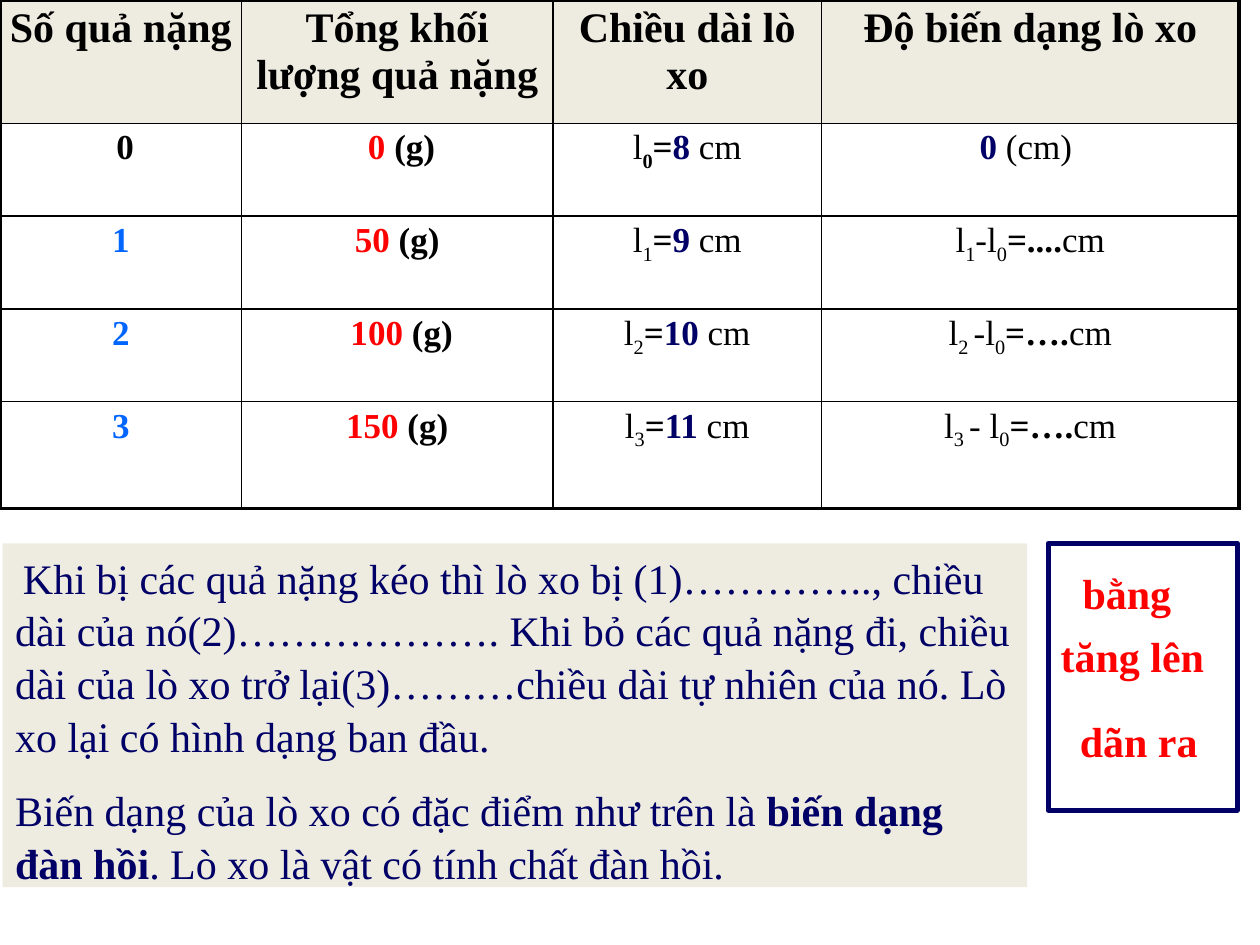
from dataclasses import dataclass

from lxml.etree import SubElement
from pptx import Presentation
from pptx.dml.color import RGBColor
from pptx.enum.shapes import MSO_SHAPE as Shape
from pptx.enum.text import MSO_ANCHOR as Anchor, PP_ALIGN as Align
from pptx.oxml.ns import qn
from pptx.util import Pt

COLORS = {
    "black": "000000", "white": "FFFFFF", "cream": "EEECE1",
    "navy": "000066", "blue": "0066FF", "red": "FF0000",
}
FONT = "Times New Roman"
COL_WIDTHS = [138, 178, 153.5, 238.5]
ROW_HEIGHTS = [70.5, 53, 53, 53, 61]
THIN, THICK = 1, 2.25


@dataclass(frozen=True)
class Run:
    text: str
    color: str = "black"
    bold: bool = False
    sub: bool = False
    size: float | None = None


@dataclass(frozen=True)
class Label:
    text: str
    left: float
    top: float
    width: float


def rgb(name: str) -> RGBColor:
    return RGBColor.from_string(COLORS[name])


def write(p, text: str, *, size: float, color="black", bold=False, sub=False) -> None:
    r = p.add_run()
    r.text = text
    r.font.name, r.font.size, r.font.bold = FONT, Pt(size), bold
    r.font.color.rgb = rgb(color)
    if sub:
        r.font._element.set("baseline", "-25000")


def write_runs(p, runs: list[Run], size: float) -> None:
    for run in runs:
        write(p, run.text, size=run.size or size, color=run.color,
              bold=run.bold, sub=run.sub)


def add_border(cell, side: str, width: float) -> None:
    ln = SubElement(cell._tc.get_or_add_tcPr(), qn(f"a:ln{side}"), w=str(Pt(width)))
    fill = SubElement(ln, qn("a:solidFill"))
    SubElement(fill, qn("a:srgbClr"), val=COLORS["black"])


def add_box(slide, left: float, top: float, width: float, height: float, fill: str):
    sp = slide.shapes.add_shape(Shape.RECTANGLE, Pt(left), Pt(top), Pt(width), Pt(height))
    sp.shadow.inherit = False
    sp.fill.solid()
    sp.fill.fore_color.rgb = rgb(fill)
    sp.line.fill.background()
    return sp


def length(n: str, value: str, bold_sub=False) -> list[Run]:
    """Spring length, such as l1=9 cm."""
    return [Run("l"), Run(n, sub=True, bold=bold_sub), Run("=", bold=True),
            Run(f"{value} ", "navy", True), Run("cm")]


def stretch(n: str, minus: str, dots: str) -> list[Run]:
    """Difference from the natural length, left open to fill in."""
    return [Run("l"), Run(n, sub=True), Run(f"{minus}l"), Run("0", sub=True),
            Run(f"={dots}", bold=True), Run("cm")]


def mass(value: str) -> list[Run]:
    return [Run(f"{value} ", "red", True), Run("(g)", bold=True)]


def count(n: str, color="blue") -> list[Run]:
    return [Run(n, color, True)]


HEADINGS = ["Số quả nặng", "Tổng khối lượng quả nặng", "Chiều dài lò xo",
            "Độ biến dạng lò xo"]
ROWS = [
    [[Run(text, bold=True)] for text in HEADINGS],
    [count(" 0", "black"), mass(" 0"), length("0", "8", bold_sub=True),
     [Run("0 ", "navy", True), Run("(cm) ")]],
    [count("1"), mass("50"), length("1", "9"), stretch("1", "-", "....")],
    [count("2"), mass(" 100"), length("2", "10"), stretch("2 ", "-", "….")],
    [count("3"), mass("150"), length("3", "11"), stretch("3 ", "- ", "….")],
]
CONCLUSION = [
    [Run(" ", "navy", size=18),
     Run("Khi bị các quả nặng kéo thì lò xo bị (1)………….., chiều dài của "
         "nó(2)………………. Khi bỏ các quả nặng đi, chiều dài của lò xo trở "
         "lại(3)………chiều dài tự nhiên của nó. Lò xo lại có hình dạng ban đầu.",
         "navy")],
    [Run("Biến dạng của lò xo có đặc điểm như trên là ", "navy"),
     Run("biến dạng đàn hồi", "navy", True),
     Run(". Lò xo là vật có tính chất đàn hồi.", "navy")],
]
ANSWERS = [
    Label("bằng", 611.5, 320.5, 68),
    Label("tăng lên", 599, 357, 106.5),
    Label("dãn ra", 610, 405.5, 86),
]


def draw_table(slide) -> None:
    n_rows, n_cols = len(ROW_HEIGHTS), len(COL_WIDTHS)
    table = slide.shapes.add_table(n_rows, n_cols, 0, 0, Pt(sum(COL_WIDTHS)),
                                   Pt(sum(ROW_HEIGHTS))).table
    table.first_row = table.horz_banding = False
    for col, width in zip(table.columns, COL_WIDTHS):
        col.width = Pt(width)
    for i, (row, height) in enumerate(zip(table.rows, ROW_HEIGHTS)):
        row.height = Pt(height)
        for j, cell in enumerate(row.cells):
            outer = {"L": j == 0, "R": j == n_cols - 1,
                     "T": i == 0, "B": i == n_rows - 1}
            for side, is_outer in outer.items():
                add_border(cell, side, THICK if is_outer else THIN)
            cell.fill.solid()
            cell.fill.fore_color.rgb = rgb("white" if i else "cream")
            cell.margin_left = cell.margin_right = Pt(5)
            cell.margin_top = cell.margin_bottom = Pt(3)
            p = cell.text_frame.paragraphs[0]
            p.alignment = Align.CENTER
            write_runs(p, ROWS[i][j], 20 if i else 24)


def draw_conclusion(slide) -> None:
    tf = add_box(slide, 1.5, 310.5, 585.5, 196.5, "cream").text_frame
    tf.word_wrap = True
    tf.vertical_anchor = Anchor.TOP
    for i, runs in enumerate(CONCLUSION):
        p = tf.add_paragraph() if i else tf.paragraphs[0]
        p.alignment = Align.LEFT
        p.line_spacing = 1.05
        p.space_before = Pt(12 if i else 0)
        write_runs(p, runs, 24)


def draw_answers(slide) -> None:
    frame = add_box(slide, 599, 310.5, 108, 152.5, "white")
    frame.line.color.rgb = rgb("navy")
    frame.line.width = Pt(3)
    for label in ANSWERS:
        tf = slide.shapes.add_textbox(Pt(label.left), Pt(label.top),
                                      Pt(label.width), Pt(36)).text_frame
        tf.word_wrap = True
        write(tf.paragraphs[0], label.text, size=24, color="red", bold=True)


def main() -> None:
    prs = Presentation()
    prs.slide_width, prs.slide_height = Pt(720), Pt(540)
    slide = prs.slides.add_slide(prs.slide_layouts[6])
    draw_table(slide)
    draw_conclusion(slide)
    draw_answers(slide)
    prs.save("out.pptx")


if __name__ == "__main__":
    main()
